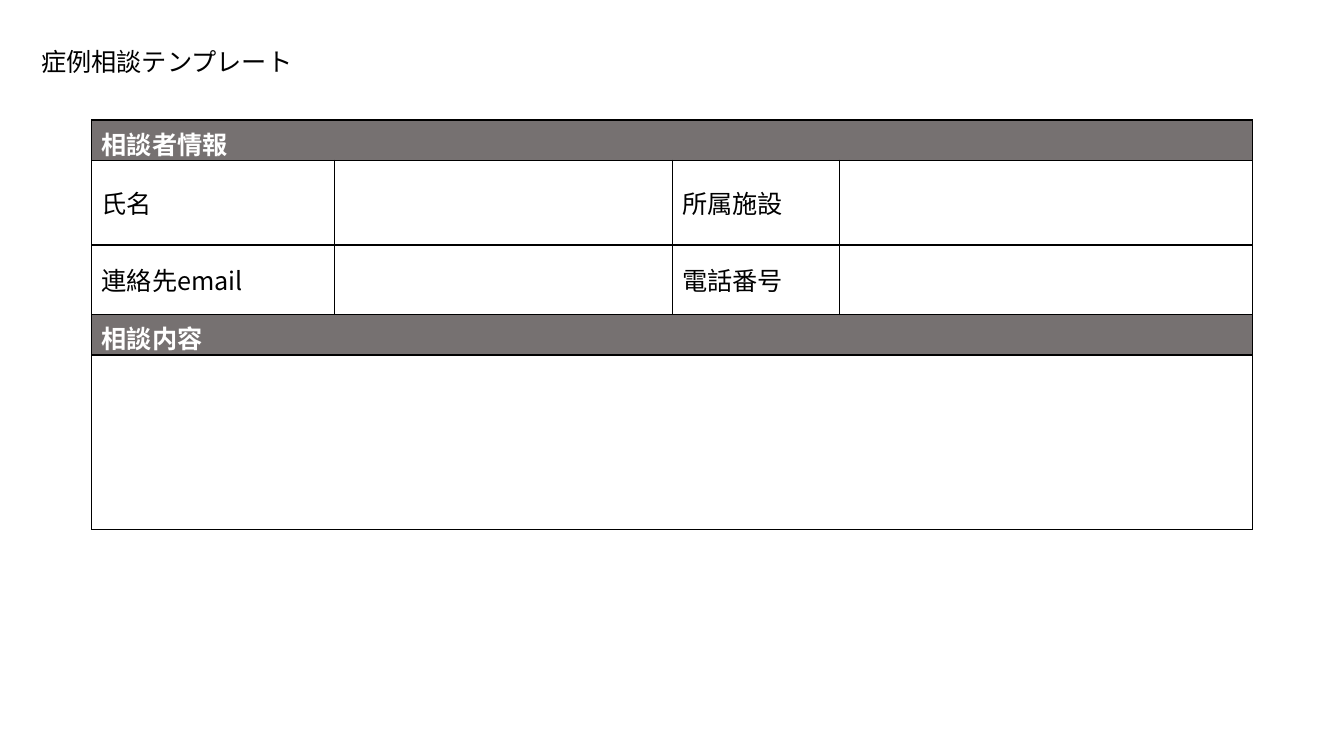
from dataclasses import dataclass

from lxml import etree
from pptx import Presentation
from pptx import util as u
from pptx.dml import color
from pptx.enum import text
from pptx.oxml import ns


@dataclass(frozen=True)
class Theme:
    """Colours, type and line sizes of the form."""
    ink: str = "000000"
    paper: str = "FFFFFF"
    band: str = "767171"
    face: str = "Noto Sans CJK JP"
    size: float = 18
    rule: float = 1


THEME = Theme()
COLS = (173.5, 241.2, 119.5, 295.2)
ROWS = (25.2, 60.5, 49.7, 25.2, 124.5)
BANDS = {0: "相談者情報", 3: "相談内容"}
FIELDS = {
    (1, 0): "氏名",
    (1, 2): "所属施設",
    (2, 0): "連絡先email",
    (2, 2): "電話番号",
}


def assign(item, values):
    """Set each named value on the item."""
    for name, value in values.items():
        setattr(item, name, value)


def write(frame, words, tint, bold=False):
    """Put one styled run into a text frame."""
    run = frame.paragraphs[0].add_run()
    run.text = words
    assign(run.font, {"name": THEME.face, "size": u.Pt(THEME.size), "bold": bold})
    run.font.color.rgb = color.RGBColor.from_string(tint)
    east = etree.SubElement(run.font._element, ns.qn("a:ea"))
    east.set("typeface", THEME.face)


def border(cell):
    """Draw a solid line on all four sides of a cell."""
    props = cell._tc.get_or_add_tcPr()
    for place, side in enumerate(("lnL", "lnR", "lnT", "lnB")):
        line = etree.Element(ns.qn(f"a:{side}"), w=str(u.Pt(THEME.rule)))
        fill = etree.SubElement(line, ns.qn("a:solidFill"))
        etree.SubElement(fill, ns.qn("a:srgbClr"), val=THEME.ink)
        props.insert(place, line)


def title(slide, words):
    """Add the heading above the form."""
    box = slide.shapes.add_textbox(u.Pt(22.3), u.Pt(29.5), u.Pt(480), u.Pt(28.8))
    assign(box.text_frame, {
        "word_wrap": True,
        "auto_size": text.MSO_AUTO_SIZE.SHAPE_TO_FIT_TEXT,
    })
    write(box.text_frame, words, THEME.ink)


def grid(slide):
    """Add the bordered table with full-width rows merged."""
    frame = slide.shapes.add_table(
        len(ROWS), len(COLS), u.Pt(65.5), u.Pt(85.7), u.Pt(sum(COLS)), u.Pt(sum(ROWS)))
    table = frame.table
    assign(table, {"first_row": False, "horz_banding": False})
    for col, width in zip(table.columns, COLS):
        col.width = u.Pt(width)
    for row, height in zip(table.rows, ROWS):
        row.height = u.Pt(height)
    for row in (*BANDS, len(ROWS) - 1):
        table.cell(row, 0).merge(table.cell(row, len(COLS) - 1))
    for row in range(len(ROWS)):
        for col in range(len(COLS)):
            cell = table.cell(row, col)
            cell.vertical_anchor = text.MSO_ANCHOR.MIDDLE
            cell.fill.solid()
            tint = THEME.band if row in BANDS else THEME.paper
            cell.fill.fore_color.rgb = color.RGBColor.from_string(tint)
            border(cell)
    return table


def main():
    """Build the case consultation form and save it."""
    deck = Presentation()
    assign(deck, {"slide_width": u.Pt(960), "slide_height": u.Pt(540)})
    slide = deck.slides.add_slide(deck.slide_layouts[6])
    title(slide, "症例相談テンプレート")
    table = grid(slide)
    for row, words in BANDS.items():
        write(table.cell(row, 0).text_frame, words, THEME.paper, True)
    for (row, col), words in FIELDS.items():
        write(table.cell(row, col).text_frame, words, THEME.ink)
    deck.save("out.pptx")


if __name__ == "__main__":
    main()
